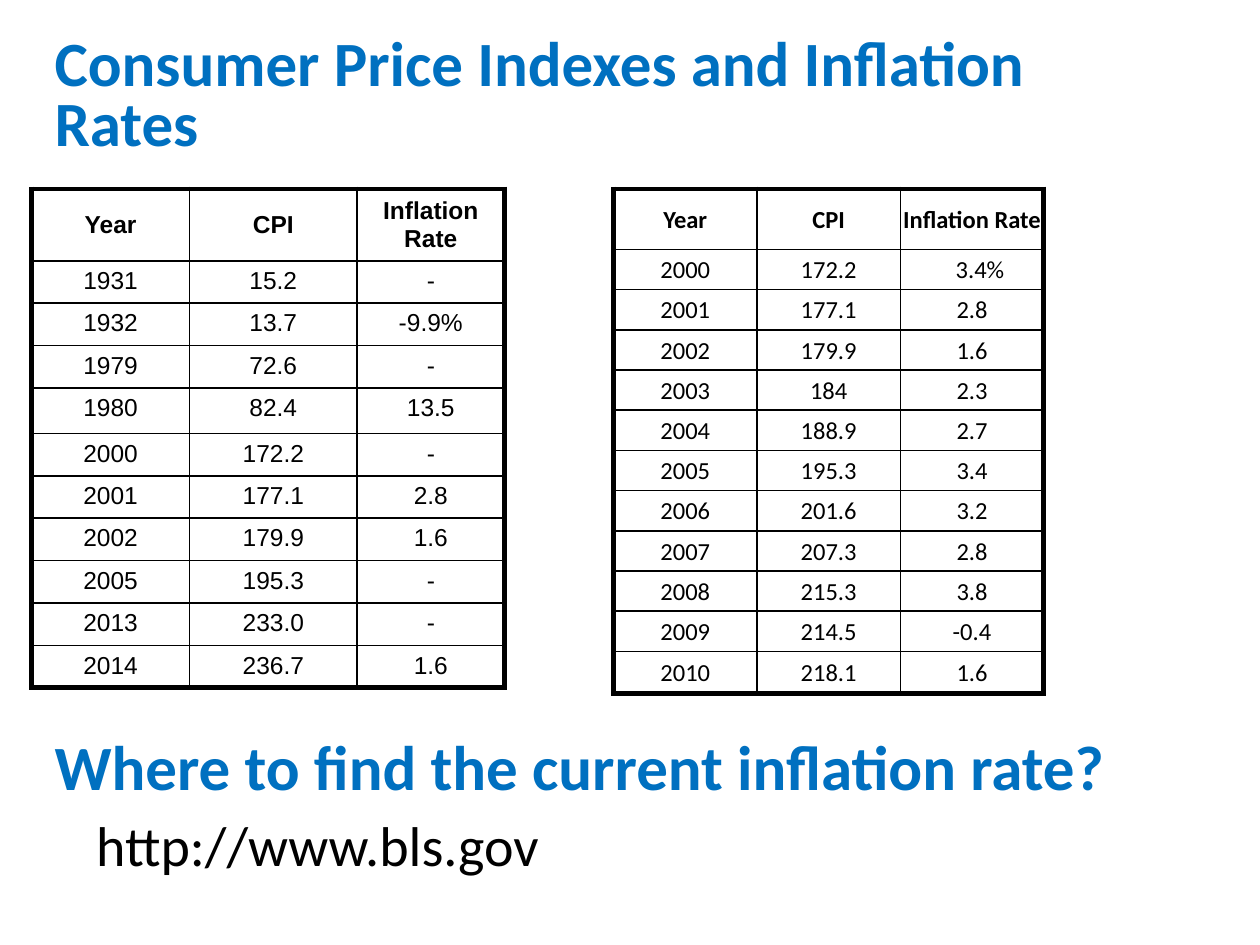
from dataclasses import dataclass

from lxml import etree
from pptx import Presentation
from pptx.dml.color import RGBColor
from pptx.enum.text import MSO_ANCHOR, MSO_AUTO_SIZE, PP_ALIGN
from pptx.oxml.ns import qn
from pptx.util import Cm, Pt

TOP, MIDDLE = MSO_ANCHOR.TOP, MSO_ANCHOR.MIDDLE
LEFT, CENTER = PP_ALIGN.LEFT, PP_ALIGN.CENTER
GROW = MSO_AUTO_SIZE.SHAPE_TO_FIT_TEXT
COLORS = {"blue": "0070C0", "black": "000000"}
HEADS = ("Year", "CPI", "Inflation Rate")
THICK, THIN = Pt(3), Pt(1)


@dataclass
class Line:
    text: str
    box: tuple[float, float, float, float]
    size: int
    color: str
    bold: bool
    anchor: MSO_ANCHOR


@dataclass
class Grid:
    left: float
    top: float
    cols: tuple[float, ...]
    rows: tuple[float, ...]
    data: list[tuple[str, str, str]]
    font: str
    pads: tuple[float, float, float, float]
    anchor: MSO_ANCHOR


LINES = [
    Line("Consumer Price Indexes and Inflation Rates",
         (0.85, 0.61, 21.59, 2.74), 36, "blue", True, MIDDLE),
    Line("Where to find the current inflation rate?",
         (0.85, 14.82, 23.71, 1.52), 36, "blue", True, MIDDLE),
    Line("http://www.bls.gov",
         (1.69, 16.47, 21.17, 1.37), 32, "black", False, TOP),
]

GRIDS = [
    Grid(0.64, 3.81, (3.18, 3.38, 2.97),
         (1.44, *[0.85] * 3, 0.92, *[0.85] * 6),
         [("1931", "15.2", "-"), ("1932", "13.7", "-9.9%"),
          ("1979", "72.6", "-"), ("1980", "82.4", "13.5"),
          ("2000", "172.2", "-"), ("2001", "177.1", "2.8"),
          ("2002", "179.9", "1.6"), ("2005", "195.3", "-"),
          ("2013", "233.0", "-"), ("2014", "236.7", "1.6")],
         "Arial", (0.25, 0.13, 0.25, 0.13), TOP),
    Grid(12.37, 3.81, (2.89,) * 3,
         (1.22, *[0.81] * 10, 0.85),
         [("2000", "172.2", "3.4%"), ("2001", "177.1", "2.8"),
          ("2002", "179.9", "1.6"), ("2003", "184", "2.3"),
          ("2004", "188.9", "2.7"), ("2005", "195.3", "3.4"),
          ("2006", "201.6", "3.2"), ("2007", "207.3", "2.8"),
          ("2008", "215.3", "3.8"), ("2009", "214.5", "-0.4"),
          ("2010", "218.1", "1.6")],
         "Calibri", (0.03, 0.03, 0.03, 0), MIDDLE),
]


def write(frame, text: str, *, size: int, font: str = "Calibri",
          color: str = "black", bold: bool = False,
          align: PP_ALIGN = LEFT, space: float = 1.0) -> None:
    para = frame.paragraphs[0]
    para.alignment = align
    para.line_spacing = space
    run = para.add_run()
    run.text = text
    run.font.name = font
    run.font.size = Pt(size)
    run.font.bold = bold
    run.font.color.rgb = RGBColor.from_string(COLORS[color])


def draw_line(slide, line: Line) -> None:
    box = slide.shapes.add_textbox(*map(Cm, line.box))
    frame = box.text_frame
    frame.word_wrap = True
    frame.auto_size = GROW
    frame.vertical_anchor = line.anchor
    write(frame, line.text, size=line.size, color=line.color,
          bold=line.bold, space=0.8)


def edge(cell, widths: dict[str, int]) -> None:
    props = cell._tc.get_or_add_tcPr()
    for spot, (side, width) in enumerate(widths.items()):
        rule = etree.Element(qn(f"a:ln{side}"), w=str(width))
        fill = etree.SubElement(rule, qn("a:solidFill"))
        etree.SubElement(fill, qn("a:srgbClr"), val=COLORS["black"])
        props.insert(spot, rule)


def draw_grid(slide, grid: Grid) -> None:
    rows = [HEADS, *grid.data]
    shape = slide.shapes.add_table(
        len(rows), len(HEADS), Cm(grid.left), Cm(grid.top),
        Cm(sum(grid.cols)), Cm(sum(grid.rows)))
    table = shape.table
    table.first_row = table.horz_banding = False
    for col, width in zip(table.columns, grid.cols):
        col.width = Cm(width)
    for row, height in zip(table.rows, grid.rows):
        row.height = Cm(height)
    for r, row in enumerate(rows):
        for c, text in enumerate(row):
            cell = table.cell(r, c)
            left, top, right, base = map(Cm, grid.pads)
            shift = Cm(0.32) if text == "3.4%" else 0
            cell.margin_left, cell.margin_right = left + shift, right
            cell.margin_top, cell.margin_bottom = top, base
            cell.vertical_anchor = MIDDLE if r == 0 else grid.anchor
            cell.fill.background()
            write(cell.text_frame, text, size=14, font=grid.font,
                  bold=r == 0, align=CENTER)
            edge(cell, {
                "L": THICK if c == 0 else THIN,
                "R": THICK if c == len(HEADS) - 1 else THIN,
                "T": THICK if r == 0 else THIN,
                "B": THICK if r == len(rows) - 1 else THIN,
            })


def main() -> None:
    deck = Presentation()
    deck.slide_width, deck.slide_height = Cm(25.4), Cm(19.05)
    slide = deck.slides.add_slide(deck.slide_layouts[6])
    for line in LINES:
        draw_line(slide, line)
    for grid in GRIDS:
        draw_grid(slide, grid)
    deck.save("out.pptx")


if __name__ == "__main__":
    main()
